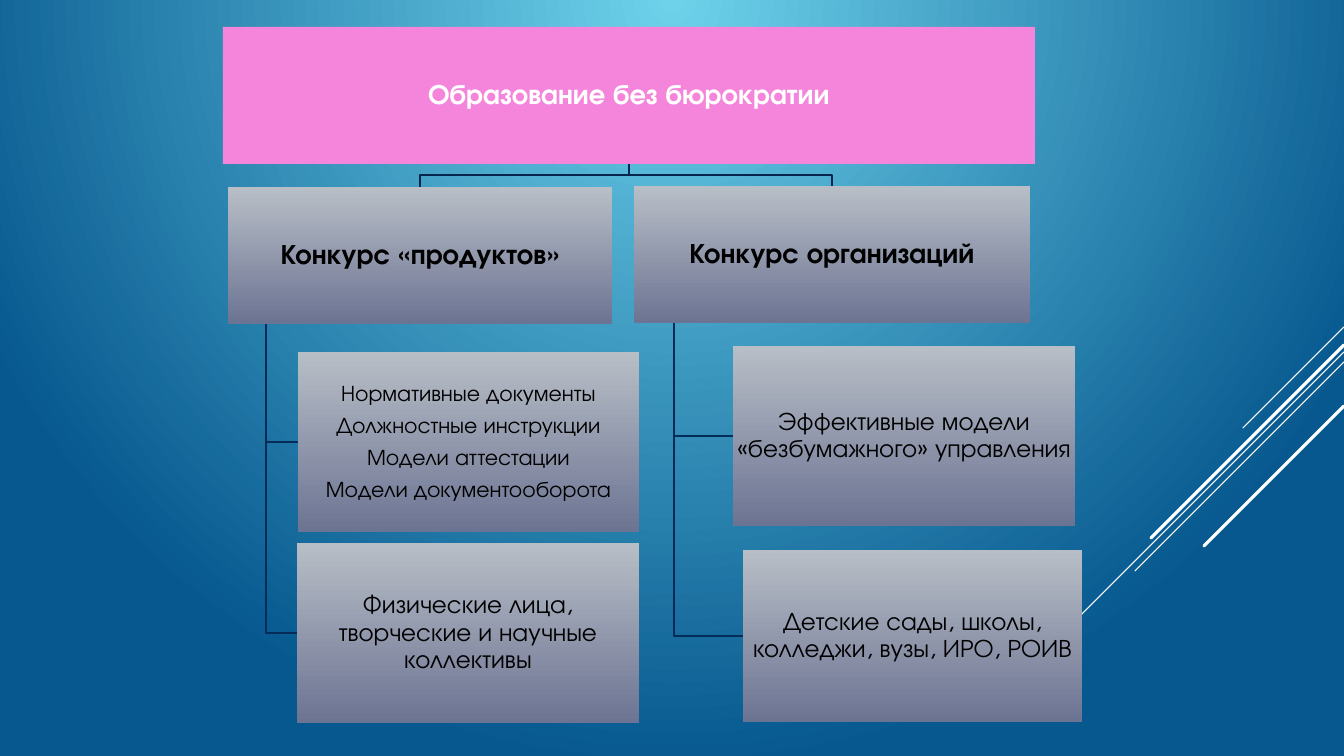
from dataclasses import dataclass

from lxml.etree import SubElement
from pptx import Presentation
from pptx.dml.color import RGBColor
from pptx.enum.shapes import MSO_CONNECTOR, MSO_SHAPE
from pptx.enum.text import MSO_ANCHOR, MSO_AUTO_SIZE, PP_ALIGN
from pptx.oxml.ns import qn
from pptx.util import Emu, Pt

SCALE = 12192000 / 1344
WIDE, HIGH = 1344, 756


def px(count):
    return Emu(round(count * SCALE))


def tint(code):
    return RGBColor.from_string(code)


@dataclass(frozen=True)
class Theme:
    font: str = "TeX Gyre Adventor"
    sky: tuple = ("6ED2EB", "06588E")
    steel: tuple = ("B8BEC6", "6C7493")
    pink: str = "F585DB"
    white: str = "FFFFFF"
    black: str = "000000"
    upper: str = "04264E"
    lower: str = "052B58"
    head: int = 20
    body: int = 18
    small: int = 16
    wire: float = 1.25
    thin: float = 0.75
    thick: float = 2.25


@dataclass(frozen=True)
class Box:
    left: int
    top: int
    width: int
    height: int

    @property
    def center(self):
        return self.left + self.width // 2

    @property
    def middle(self):
        return self.top + self.height // 2

    @property
    def bottom(self):
        return self.top + self.height


class Chart:
    def __init__(self, slide, theme):
        self.slide = slide
        self.theme = theme

    def blend(self, fill, pair):
        fill.gradient()
        for stop, code in zip(fill.gradient_stops, pair):
            stop.color.rgb = tint(code)

    def back(self):
        self.blend(self.slide.background.fill, self.theme.sky)
        grad = self.slide.element.find(".//" + qn("a:gradFill"))
        grad.remove(grad.find(qn("a:lin")))
        glow = SubElement(grad, qn("a:path"), {"path": "circle"})
        SubElement(glow, qn("a:fillToRect"), {"b": "100000"})

    def ray(self, top, run, weight):
        line = self.slide.shapes.add_connector(
            MSO_CONNECTOR.STRAIGHT, px(WIDE), px(top), px(WIDE - run), px(top + run))
        line.line.color.rgb = tint(self.theme.white)
        line.line.width = Pt(weight)
        props = line.element.spPr
        props.find(qn("a:ln")).set("cap", "rnd")
        SubElement(props, qn("a:effectLst"))

    def wire(self, points, code):
        pen = self.slide.shapes.build_freeform(*points[0], scale=SCALE)
        pen.add_line_segments(points[1:], close=False)
        shape = pen.convert_to_shape()
        shape.fill.background()
        shape.line.color.rgb = tint(code)
        shape.line.width = Pt(self.theme.wire)
        shape.shadow.inherit = False

    def fork(self, root, child):
        turn = (root.bottom + child.top) // 2
        self.wire([(root.center, root.bottom), (root.center, turn),
                   (child.center, turn), (child.center, child.top)], self.theme.upper)

    def hang(self, root, child):
        stem = root.left + round(root.width / 10)
        self.wire([(stem, root.bottom), (stem, child.middle),
                   (child.left, child.middle)], self.theme.lower)

    def label(self, shape, lines, size, code, bold):
        frame = shape.text_frame
        frame.auto_size = MSO_AUTO_SIZE.NONE
        frame.word_wrap = True
        frame.vertical_anchor = MSO_ANCHOR.MIDDLE
        frame.margin_left = frame.margin_right = px(1)
        frame.margin_top = frame.margin_bottom = px(1)
        frame.text = "\n".join(lines)
        for para in frame.paragraphs:
            para.alignment = PP_ALIGN.CENTER
            para.line_spacing = 0.9
            para.space_before = Pt(0)
            para.space_after = Pt(round(size * 0.35, 1))
            para.font.name = self.theme.font
            para.font.size = Pt(size)
            para.font.bold = bold
            para.font.color.rgb = tint(code)

    def title(self, box, text):
        shape = self.slide.shapes.title
        shape.left, shape.top = px(box.left), px(box.top)
        shape.width, shape.height = px(box.width), px(box.height)
        shape.fill.solid()
        shape.fill.fore_color.rgb = tint(self.theme.pink)
        self.label(shape, [text], self.theme.head, self.theme.white, True)

    def card(self, box, lines, size, bold=False):
        shape = self.slide.shapes.add_shape(
            MSO_SHAPE.RECTANGLE, px(box.left), px(box.top), px(box.width), px(box.height))
        self.blend(shape.fill, self.theme.steel)
        shape.fill.gradient_angle = 270
        shape.line.fill.background()
        shape.shadow.inherit = False
        self.label(shape, lines, size, self.theme.black, bold)


def main():
    deck = Presentation()
    deck.slide_width, deck.slide_height = px(WIDE), px(HIGH)
    theme = Theme()
    chart = Chart(deck.slides.add_slide(deck.slide_layouts[5]), theme)
    chart.back()

    for top, run, weight in [(327, 101, theme.thin), (352, 328, theme.thin),
                             (362, 209, theme.thin), (345, 193, theme.thick),
                             (406, 140, theme.thick)]:
        chart.ray(top, run, weight)

    root = Box(223, 27, 812, 137)
    chart.title(root, "Образование без бюрократии")

    papers = ["Нормативные документы", "Должностные инструкции",
              "Модели аттестации", "Модели документооборота"]
    people = ["Физические лица, творческие и научные коллективы"]
    models = ["Эффективные модели «безбумажного» управления"]
    schools = ["Детские сады, школы, колледжи, вузы, ИРО, РОИВ"]
    groups = [
        (Box(228, 187, 384, 137), "Конкурс «продуктов»", [
            (Box(298, 352, 341, 180), papers, theme.small),
            (Box(297, 543, 342, 180), people, theme.body)]),
        (Box(634, 186, 396, 137), "Конкурс организаций", [
            (Box(733, 346, 342, 180), models, theme.body),
            (Box(743, 550, 339, 172), schools, theme.body)]),
    ]
    for box, name, leaves in groups:
        chart.fork(root, box)
        chart.card(box, [name], theme.head, True)
        for leaf, lines, size in leaves:
            chart.hang(box, leaf)
            chart.card(leaf, lines, size)

    deck.save("out.pptx")


if __name__ == "__main__":
    main()
